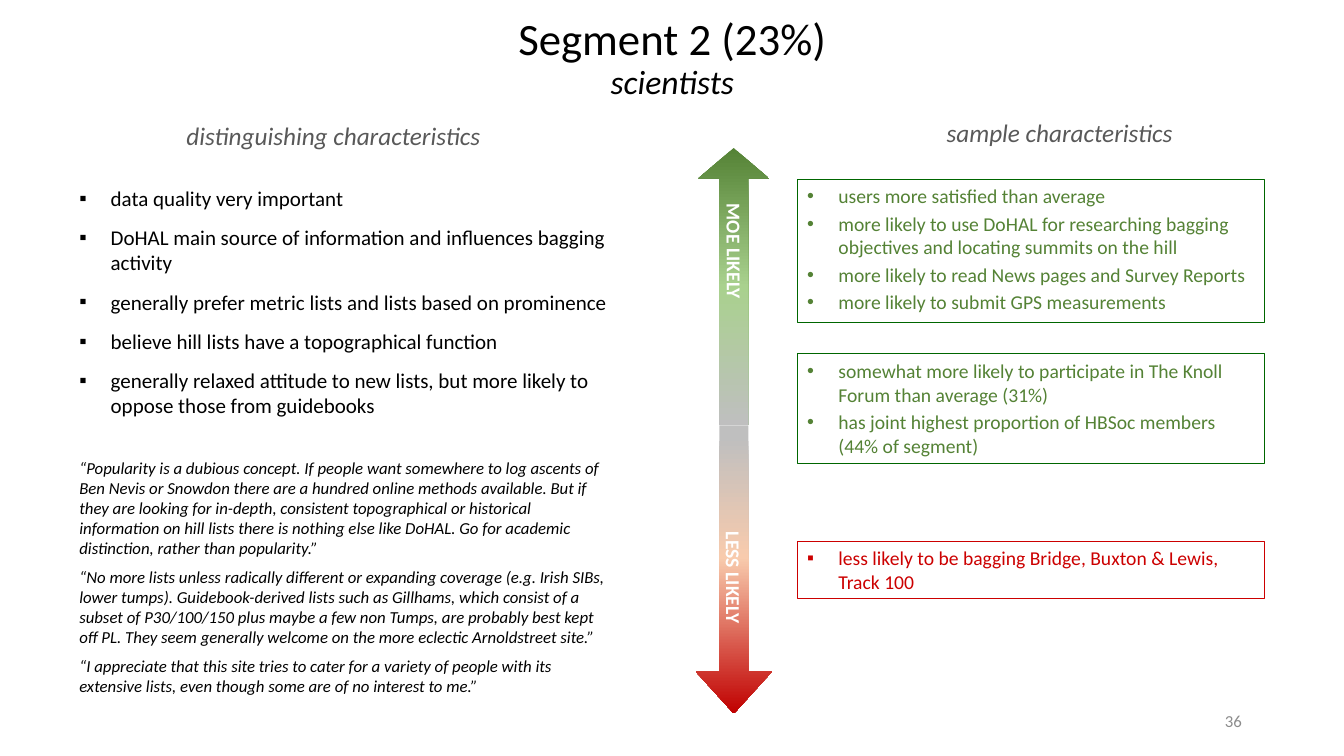
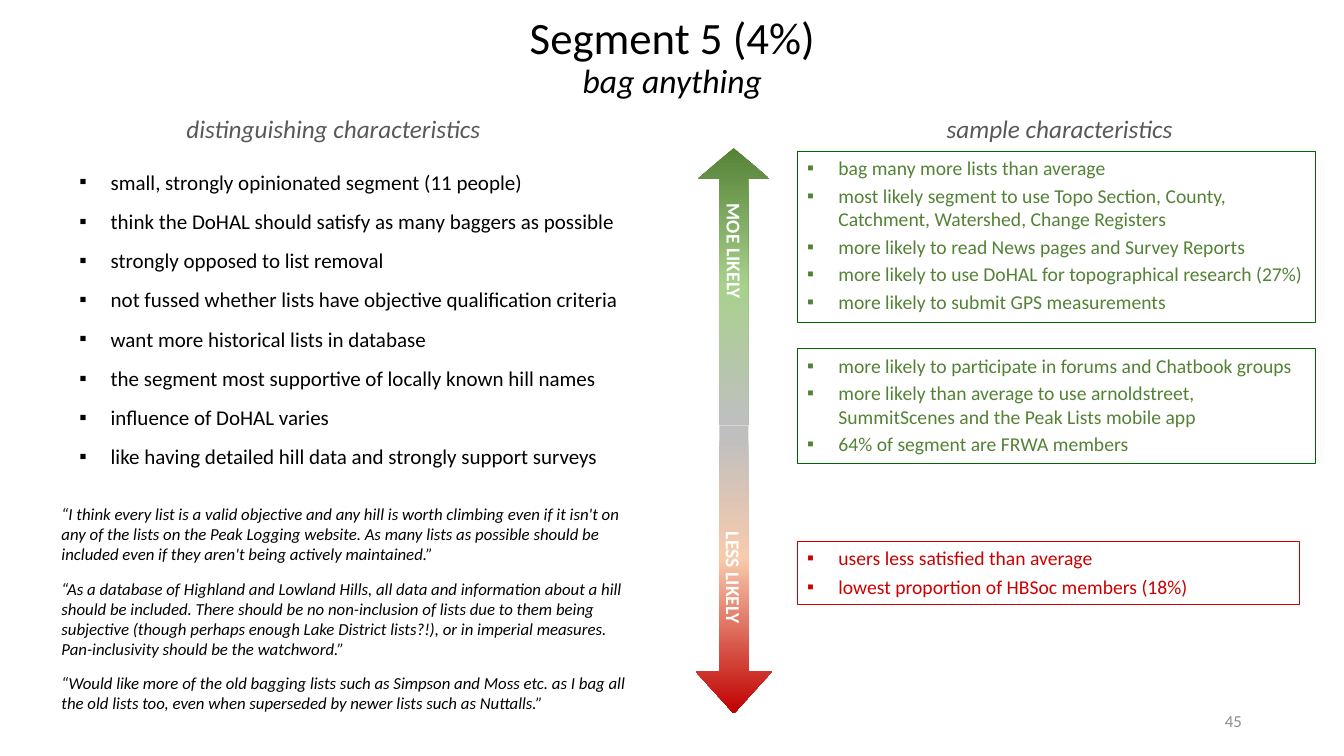
"""Build the survey segment profile slides."""
import dataclasses

import lxml.etree
import pptx
import pptx.dml.color
import pptx.enum.shapes
import pptx.enum.text
import pptx.oxml.ns
import pptx.util

Cm = pptx.util.Cm
Pt = pptx.util.Pt
qn = pptx.oxml.ns.qn
Align = pptx.enum.text.PP_ALIGN
Anchor = pptx.enum.text.MSO_ANCHOR
Preset = pptx.enum.shapes.MSO_SHAPE


@dataclasses.dataclass(frozen=True)
class TextStyle:
    """Describe how one kind of text looks."""
    size: float
    color: str
    bold: bool = False
    italic: bool = False
    align: Align = Align.LEFT
    before: float = 0


class Theme:
    """Hold the shared colours, type sizes and text styles."""
    font = "Calibri"
    paper = "FFFFFF"
    more_border = "006600"
    less_border = "CC0000"
    more_gradient = ((0, "548235"), (50, "A9D18E"), (100, "BFBFBF"))
    less_gradient = ((4, "BFBFBF"), (46, "F8CBAD"), (100, "C00000"))
    subtitle_size = 24
    title = TextStyle(32, "000000", align=Align.CENTER)
    heading = TextStyle(18, "595959", italic=True, align=Align.CENTER)
    point = TextStyle(15, "000000", before=10)
    quote = TextStyle(12, "000000", italic=True)
    more = TextStyle(14, "548235", before=2.8)
    less = TextStyle(14, "CC0000", before=4)
    arrow_label = TextStyle(14, "FFFFFF", bold=True)
    page_number = TextStyle(12, "8C8C8C", align=Align.RIGHT)


def rgb(code):
    """Turn a hex code into a colour."""
    return pptx.dml.color.RGBColor.from_string(code)


class SegmentDeck:
    """Draw segment profiles on the current slide."""

    def __init__(self, theme):
        self.theme = theme
        self.deck = pptx.Presentation()
        self.deck.slide_width = Cm(33.87)
        self.deck.slide_height = Cm(19.05)
        self.slide = None

    def start_slide(self):
        """Open a new blank slide."""
        self.slide = self.deck.slides.add_slide(self.deck.slide_layouts[6])

    def set_text(self, frame, lines, style, bullet=None, anchor=Anchor.TOP):
        """Fill a text frame with styled paragraphs."""
        frame.word_wrap = True
        frame.vertical_anchor = anchor
        frame.text = "\n".join(lines)
        for paragraph in frame.paragraphs:
            paragraph.alignment = style.align
            paragraph.space_before = Pt(style.before)
            if bullet:
                self.add_bullet(paragraph, bullet)
            for run in paragraph.runs:
                run.font.name = self.theme.font
                run.font.size = Pt(style.size)
                run.font.bold = style.bold
                run.font.italic = style.italic
                run.font.color.rgb = rgb(style.color)

    def add_bullet(self, paragraph, bullet):
        """Give a paragraph a hanging bullet."""
        properties = paragraph._p.get_or_add_pPr()
        indent = Cm(0.79)
        properties.set("marL", str(indent))
        properties.set("indent", str(-indent))
        lxml.etree.SubElement(properties, qn("a:buFont")).set("typeface", "Arial")
        lxml.etree.SubElement(properties, qn("a:buChar")).set("char", bullet)

    def label(self, box, lines, style, anchor=Anchor.TOP, rotation=0):
        """Place plain text."""
        text = self.slide.shapes.add_textbox(*map(Cm, box))
        text.rotation = rotation
        self.set_text(text.text_frame, lines, style, anchor=anchor)
        return text.text_frame

    def title(self, top, name, nickname):
        """Place the segment name above its italic nickname."""
        frame = self.label((2.34, top, 29.21, 2.4), [f"{name}\v{nickname}"],
                           self.theme.title, Anchor.MIDDLE)
        heading = frame.paragraphs[0]
        heading.line_spacing = 0.9
        heading.runs[1].font.size = Pt(self.theme.subtitle_size)
        heading.runs[1].font.italic = True

    def panel(self, box, lines, style, bullet=None, border=None):
        """Place a white panel of paragraphs."""
        panel = self.slide.shapes.add_shape(Preset.RECTANGLE, *map(Cm, box))
        panel.shadow.inherit = False
        panel.fill.solid()
        panel.fill.fore_color.rgb = rgb(self.theme.paper)
        if border:
            panel.line.color.rgb = rgb(border)
            panel.line.width = Pt(0.75)
        else:
            panel.line.fill.background()
        self.set_text(panel.text_frame, lines, style, bullet)

    def arrow(self, preset, box, proportions, gradient):
        """Place a block arrow with a vertical gradient."""
        arrow = self.slide.shapes.add_shape(preset, *map(Cm, box))
        arrow.shadow.inherit = False
        arrow.line.fill.background()
        for index, proportion in enumerate(proportions):
            arrow.adjustments[index] = proportion
        arrow.fill.gradient()
        arrow.fill.gradient_angle = 270
        stops = arrow._element.spPr.find(qn("a:gradFill")).find(qn("a:gsLst"))
        for stop in list(stops):
            stops.remove(stop)
        for percent, code in gradient:
            stop = lxml.etree.SubElement(stops, qn("a:gs"))
            stop.set("pos", str(percent * 1000))
            lxml.etree.SubElement(stop, qn("a:srgbClr")).set("val", code)

    def likelihood_scale(self):
        """Place the two arrows and their labels."""
        theme = self.theme
        self.arrow(Preset.DOWN_ARROW, (17.53, 10.72, 1.93, 7.26),
                   (0.38, 0.55), theme.less_gradient)
        self.arrow(Preset.UP_ARROW, (17.6, 3.73, 1.78, 6.99),
                   (0.41, 0.43), theme.more_gradient)
        for box, wording in (((16.69, 6.27, 3.63, 0.86), "MOE LIKELY"),
                             ((16.76, 14.45, 3.45, 0.86), "LESS LIKELY")):
            self.label(box, [wording], theme.arrow_label, rotation=89.7)

    def profile(self, segment):
        """Draw one complete segment slide."""
        theme = self.theme
        self.start_slide()
        self.title(segment["title_top"], segment["name"], segment["nickname"])
        self.likelihood_scale()
        traits_top, sample_top = segment["heading_tops"]
        self.label((3.91, traits_top, 8.99, 1.02),
                   ["distinguishing characteristics"], theme.heading)
        self.label((21.89, sample_top, 9.63, 1.02),
                   ["sample characteristics"], theme.heading)
        box, points = segment["points"]
        self.panel(box, points, theme.point, "▪")
        box, quotes, gap = segment["quotes"]
        self.panel(box, quotes, dataclasses.replace(theme.quote, before=gap))
        for box, findings in segment["more"]:
            self.panel(box, findings, theme.more, segment["more_bullet"],
                       theme.more_border)
        box, findings = segment["less"]
        self.panel(box, findings, theme.less, "▪", theme.less_border)
        self.label((23.93, 17.65, 7.62, 1.02), [segment["page"]],
                   theme.page_number, Anchor.MIDDLE)


SEGMENTS = (
    {
        "name": "Segment 2 (23%)",
        "nickname": "scientists",
        "page": "36",
        "title_top": 0.3,
        "heading_tops": (2.9, 2.84),
        "points": ((1.75, 4.55, 14.02, 6.17), [
            "data quality very important",
            "DoHAL main source of information and influences bagging activity",
            "generally prefer metric lists and lists based on prominence",
            "believe hill lists have a topographical function",
            "generally relaxed attitude to new lists, but more likely to "
            "oppose those from guidebooks",
        ]),
        "quotes": ((1.75, 11.4, 14.02, 6.32), [
            "“Popularity is a dubious concept. If people want somewhere to log "
            "ascents of Ben Nevis or Snowdon there are a hundred online methods "
            "available. But if they are looking for in-depth, consistent "
            "topographical or historical information on hill lists there is "
            "nothing else like DoHAL. Go for academic distinction, rather than "
            "popularity.”",
            "“No more lists unless radically different or expanding coverage "
            "(e.g. Irish SIBs, lower tumps). Guidebook-derived lists such as "
            "Gillhams, which consist of a subset of P30/100/150 plus maybe a few "
            "non Tumps, are probably best kept off PL. They seem generally "
            "welcome on the more eclectic Arnoldstreet site.”",
            "“I appreciate that this site tries to cater for a variety of people "
            "with its extensive lists, even though some are of no interest to me.”",
        ], 6),
        "more_bullet": "•",
        "more": (
            ((20.09, 4.52, 11.79, 3.61), [
                "users more satisfied than average",
                "more likely to use DoHAL for researching bagging objectives "
                "and locating summits on the hill",
                "more likely to read News pages and Survey Reports",
                "more likely to submit GPS measurements",
            ]),
            ((20.09, 8.92, 11.79, 2.77), [
                "somewhat more likely to participate in The Knoll Forum than "
                "average (31%)",
                "has joint highest proportion of HBSoc members (44% of segment)",
            ]),
        ),
        "less": ((20.09, 13.64, 11.79, 1.45), [
            "less likely to be bagging Bridge, Buxton & Lewis, Track 100",
        ]),
    },
    {
        "name": "Segment 5 (4%)",
        "nickname": "bag anything",
        "page": "45",
        "title_top": 0.26,
        "heading_tops": (2.74, 2.72),
        "points": ((1.75, 4.14, 14.17, 7.87), [
            "small, strongly opinionated segment (11 people)",
            "think the DoHAL should satisfy as many baggers as possible",
            "strongly opposed to list removal",
            "not fussed whether lists have objective qualification criteria",
            "want more historical lists in database",
            "the segment most supportive of locally known hill names",
            "influence of DoHAL varies",
            "like having detailed hill data and strongly support surveys",
        ]),
        "quotes": ((1.3, 12.57, 15.04, 5.59), [
            "“I think every list is a valid objective and any hill is worth "
            "climbing even if it isn't on any of the lists on the Peak Logging "
            "website. As many lists as possible should be included even if they "
            "aren't being actively maintained.”",
            "“As a database of Highland and Lowland Hills, all data and information "
            "about a hill should be included. There should be no non-inclusion "
            "of lists due to them being subjective (though perhaps enough Lake "
            "District lists?!), or in imperial measures. Pan-inclusivity should "
            "be the watchword.”",
            "“Would like more of the old bagging lists such as Simpson and Moss "
            "etc. as I bag all the old lists too, even when superseded by newer "
            "lists such as Nuttalls.”",
        ], 10),
        "more_bullet": "▪",
        "more": (
            ((20.09, 3.81, 13.06, 4.32), [
                "bag many more lists than average",
                "most likely segment to use Topo Section, County, Catchment, "
                "Watershed, Change Registers",
                "more likely to read News pages and Survey Reports",
                "more likely to use DoHAL for topographical research (27%)",
                "more likely to submit GPS measurements",
            ]),
            ((20.09, 8.79, 13.06, 2.9), [
                "more likely to participate in forums and Chatbook groups",
                "more likely than average to use arnoldstreet, SummitScenes "
                "and the Peak Lists mobile app",
                "64% of segment are FRWA members",
            ]),
        ),
        "less": ((20.09, 13.64, 12.65, 1.6), [
            "users less satisfied than average",
            "lowest proportion of HBSoc members (18%)",
        ]),
    },
)


def main():
    """Draw every segment and save the deck."""
    profiles = SegmentDeck(Theme())
    for segment in SEGMENTS:
        profiles.profile(segment)
    profiles.deck.save("out.pptx")


if __name__ == "__main__":
    main()
